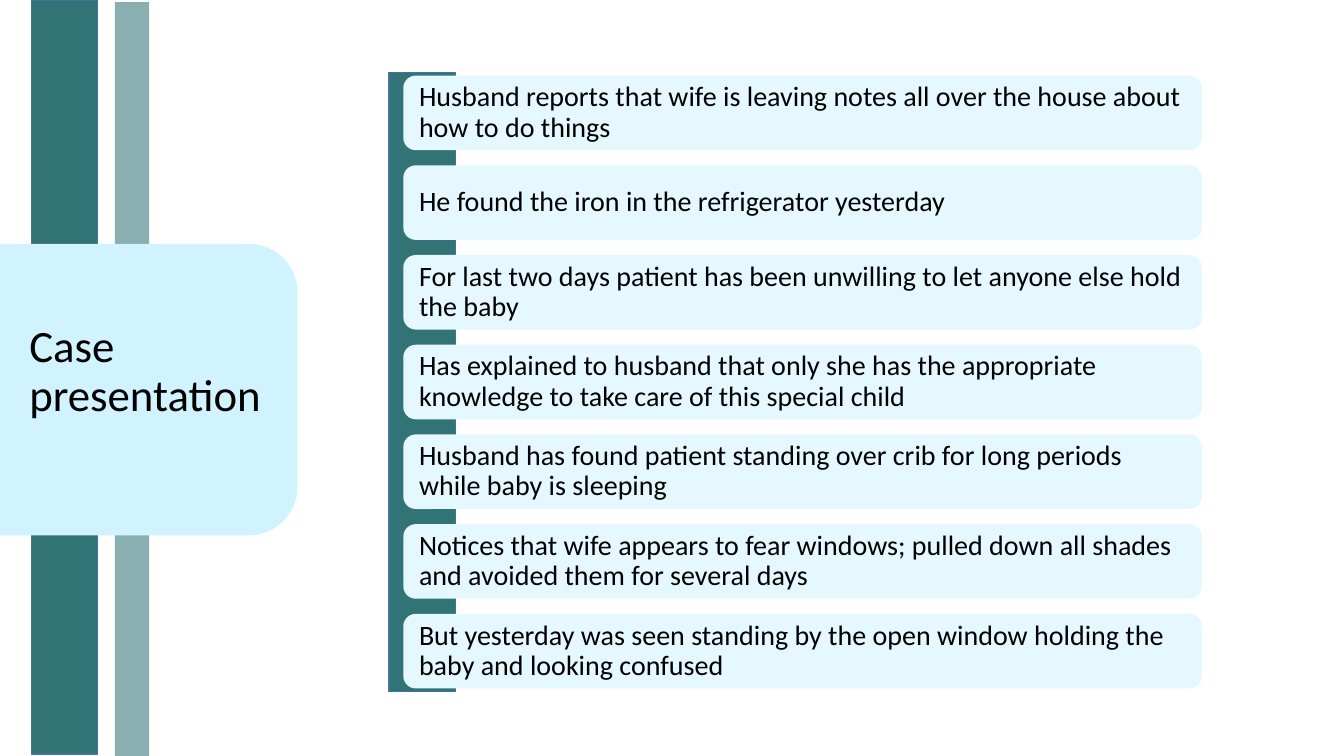
from pptx import Presentation
from pptx import util as u
from pptx.dml.color import RGBColor
from pptx.enum import shapes, text
from pptx.oxml.ns import qn
from lxml import etree

COLORS = {"teal": "327476", "outline": "43739E", "card": "E5F8FF",
          "panel": "D1F3FF", "text": "000000"}
FONT = "Calibri"
FINDINGS = [
    "Husband reports that wife is leaving notes all over the house about how to do things",
    "He found the iron in the refrigerator yesterday",
    "For last two days patient has been unwilling to let anyone else hold the baby",
    "Has explained to husband that only she has the appropriate knowledge to take care of this special child",
    "Husband has found patient standing over crib for long periods while baby is sleeping",
    "Notices that wife appears to fear windows; pulled down all shades and avoided them for several days",
    "But yesterday was seen standing by the open window holding the baby and looking confused",
]


def add_block(s, kind, box, fill, line=None, alpha=None):
    sp = s.shapes.add_shape(kind, *map(u.Inches, box))
    sp.shadow.inherit = False
    sp.fill.solid()
    sp.fill.fore_color.rgb = RGBColor.from_string(COLORS[fill])
    if line:
        sp.line.color.rgb = RGBColor.from_string(COLORS[line])
        sp.line.width = u.Pt(1)
    else:
        sp.line.fill.background()
    if alpha:
        color = sp.fill._xPr.find(qn("a:solidFill"))[0]
        etree.SubElement(color, qn("a:alpha")).set("val", str(alpha * 1000))
    return sp


def set_text(sp, words, size, inset_x, inset_y):
    tf = sp.text_frame
    tf.text = words
    tf.word_wrap = True
    tf.auto_size = text.MSO_AUTO_SIZE.NONE
    tf.vertical_anchor = text.MSO_ANCHOR.MIDDLE
    tf.margin_left = tf.margin_right = u.Inches(inset_x)
    tf.margin_top = tf.margin_bottom = u.Inches(inset_y)
    p = tf.paragraphs[0]
    p.alignment = text.PP_ALIGN.LEFT
    p.line_spacing = 0.9
    for r in p.runs:
        r.font.name = FONT
        r.font.size = u.Pt(size)
        r.font.color.rgb = RGBColor.from_string(COLORS["text"])


def add_stripes(s, left, top, height):
    rect = shapes.MSO_SHAPE.RECTANGLE
    add_block(s, rect, (left + 0.83, top + 0.02, 0.34, height), "teal", alpha=57)
    add_block(s, rect, (left, top, 0.66, height), "teal", "outline")


def add_findings(s, left, top, width, height):
    add_block(s, shapes.MSO_SHAPE.RECTANGLE, (left, top, 0.66, height), "teal", "outline")
    card_h, pad = 0.74, 0.03
    pitch = (height - 2 * pad - card_h) / (len(FINDINGS) - 1)
    for i, finding in enumerate(FINDINGS):
        box = (left + 0.14, top + pad + i * pitch, width - 0.14, card_h)
        card = add_block(s, shapes.MSO_SHAPE.ROUNDED_RECTANGLE, box, "card")
        set_text(card, finding, 20, 0.12, 0.04)


def add_title_panel(s, left, top, width, height):
    shift = (width - height) / 2
    panel = add_block(s, shapes.MSO_SHAPE.ROUND_2_SAME_RECTANGLE,
                      (left + shift, top - shift, height, width), "panel")
    panel.rotation = 90
    title = s.shapes.title
    title.left, title.top = u.Inches(left + 0.2), u.Inches(top - 0.07)
    title.width, title.height = u.Inches(3.49), u.Inches(2.69)
    set_text(title, "Case\vpresentation", 32, 0.1, 0.05)
    panel.element.addnext(title.element)


def main():
    prs = Presentation()
    prs.slide_width, prs.slide_height = u.Inches(13.33), u.Inches(7.5)
    s = prs.slides.add_slide(prs.slide_layouts[5])
    add_stripes(s, 0.31, 0, 7.48)
    add_findings(s, 3.86, 0.72, 8.06, 6.14)
    add_title_panel(s, -0.01, 2.42, 2.96, 2.89)
    prs.save("out.pptx")


if __name__ == "__main__":
    main()
